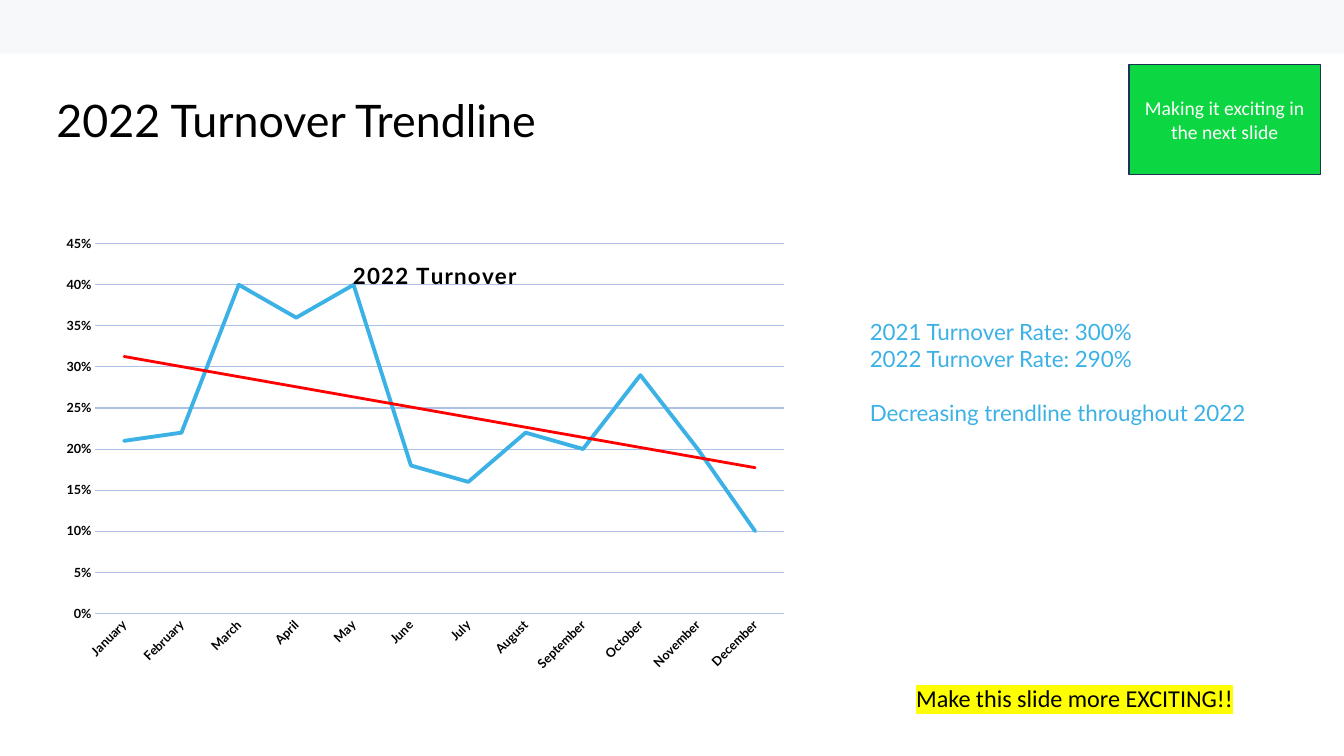
from dataclasses import dataclass

from lxml import etree
from pptx import Presentation
from pptx import oxml
from pptx.chart import data as cd
from pptx.dml import color as dc
from pptx.enum import chart as ec, shapes, text
from pptx.oxml import ns
from pptx.util import Pt

COLORS = {
    "band": "F7F8F9", "black": "000000", "white": "FFFFFF", "blue": "3CB1E5",
    "grid": "ABC0E4", "axis": "F2F2F2", "trend": "FF0000", "green": "0CD641",
    "navy": "1E3256", "yellow": "FFFF00",
}
MONTHS = ["January", "February", "March", "April", "May", "June", "July",
          "August", "September", "October", "November", "December"]
TURNOVER = [0.21, 0.22, 0.40, 0.36, 0.40, 0.18, 0.16, 0.22, 0.20, 0.29, 0.20, 0.10]


@dataclass
class Style:
    size: float
    color: str
    face: str = "Lato"
    bold: bool = False


@dataclass
class Note:
    box: tuple[float, float, float, float]
    lines: list[str]
    style: Style
    insets: tuple[float, float] = (7.2, 3.6)
    spacing: float = 1.0
    gap_before: int = -1  # index of the line that follows a gap
    highlight: str = ""


@dataclass
class Panel:
    box: tuple[float, float, float, float]
    fill: str
    line: str = ""
    label: str = ""


NOTES = [
    Note((40.3, 70.6, 422, 41), ["2022 Turnover Trendline"],
         Style(32, "black"), insets=(0, 0), spacing=0.9),
    Note((614.2, 223.9, 296, 104.4),
         ["2021 Turnover Rate: 300%", "2022 Turnover Rate: 290%",
          "Decreasing trendline throughout 2022"],
         Style(16, "blue"), gap_before=2),
    Note((647.3, 490.3, 296, 23), ["Make this slide more EXCITING!!"],
         Style(17.3, "black", "Calibri"), spacing=0.7, highlight="yellow"),
]
BAND = Panel((0, 0, 960, 38.2), "band")
CALLOUT = Panel((806.4, 46.1, 136.8, 78.5), "green", "navy",
                "Making it exciting in the next slide")


def rgb(name: str) -> dc.RGBColor:
    return dc.RGBColor.from_string(COLORS[name])


def set_font(font, style: Style) -> None:
    font.size = Pt(style.size)
    font.name = style.face
    font.bold = style.bold
    font.color.rgb = rgb(style.color)


def xml(body: str) -> etree._Element:
    tag, rest = body[1:].split(">", 1)
    end = "/" if tag.endswith("/") else ""
    return oxml.parse_xml(f"<{tag.rstrip('/')} {ns.nsdecls('a', 'c')}{end}>{rest}")


def layout(x: float, y: float, w: float = 0, h: float = 0) -> etree._Element:
    target = '<c:layoutTarget val="inner"/>' if w else ""
    size = f'<c:w val="{w}"/><c:h val="{h}"/>' if w else ""
    return xml(f'<c:layout><c:manualLayout>{target}<c:xMode val="edge"/>'
               f'<c:yMode val="edge"/><c:x val="{x}"/><c:y val="{y}"/>{size}'
               '</c:manualLayout></c:layout>')


def add_panel(slide, panel: Panel) -> None:
    sp = slide.shapes.add_shape(shapes.MSO_SHAPE.RECTANGLE, *map(Pt, panel.box))
    sp.shadow.inherit = False
    sp.fill.solid()
    sp.fill.fore_color.rgb = rgb(panel.fill)
    if panel.line:
        sp.line.color.rgb = rgb(panel.line)
        sp.line.width = Pt(1)
    else:
        sp.line.fill.background()
    if panel.label:
        tf = sp.text_frame
        tf.word_wrap = True
        tf.vertical_anchor = text.MSO_ANCHOR.MIDDLE
        p = tf.paragraphs[0]
        p.text = panel.label
        p.alignment = text.PP_ALIGN.CENTER
        set_font(p.font, Style(14, "white", "Calibri"))


def add_note(slide, note: Note) -> None:
    tf = slide.shapes.add_textbox(*map(Pt, note.box)).text_frame
    tf.word_wrap = True
    tf.margin_left = tf.margin_right = Pt(note.insets[0])
    tf.margin_top = tf.margin_bottom = Pt(note.insets[1])
    for i, line in enumerate(note.lines):
        p = tf.paragraphs[0] if i == 0 else tf.add_paragraph()
        r = p.add_run()
        r.text = line
        p.line_spacing = note.spacing
        if i == note.gap_before:
            p.space_before = Pt(19.2)
        set_font(p.font, note.style)
        if note.highlight:
            r._r.get_or_add_rPr().append(xml(
                f'<a:highlight><a:srgbClr val="{COLORS[note.highlight]}"/></a:highlight>'))


def style_axes(chart) -> None:
    months, rates = chart.category_axis, chart.value_axis
    for axis in (months, rates):
        axis.major_tick_mark = axis.minor_tick_mark = ec.XL_TICK_MARK.NONE
        set_font(axis.tick_labels.font, Style(9, "black", bold=True))
    months._element.find(ns.qn("c:txPr")).find(ns.qn("a:bodyPr")).set("rot", "-2700000")
    months.format.line.color.rgb = rgb("axis")
    months.format.line.width = Pt(0.75)
    axis_color = next(months._element.iter(ns.qn("a:srgbClr")))
    axis_color.append(xml('<a:alpha val="10000"/>'))

    rates.minimum_scale, rates.maximum_scale, rates.major_unit = 0, 0.45, 0.05
    rates.tick_labels.number_format = "0%"
    rates.tick_labels.number_format_is_linked = False
    rates.format.line.fill.background()
    rates.major_gridlines.format.line.color.rgb = rgb("grid")
    rates.major_gridlines.format.line.width = Pt(0.75)


def add_turnover_chart(slide) -> None:
    data = cd.CategoryChartData(number_format="0%")
    data.categories = MONTHS
    data.add_series("Series 1", TURNOVER)
    chart = slide.shapes.add_chart(ec.XL_CHART_TYPE.LINE, Pt(40.3), Pt(168.5),
                                   Pt(535.7), Pt(349.2), data).chart
    set_font(chart.font, Style(10, "black", "Calibri"))
    chart.has_legend = False
    style_axes(chart)

    # Title laid over the plot
    p = chart.chart_title.text_frame.paragraphs[0]
    p.text = "2022 Turnover"
    set_font(p.font, Style(16, "black", bold=True))
    p.font._element.set("spc", "100")
    title = chart.chart_title._element
    for old in title.findall(ns.qn("c:layout")):
        title.remove(old)
    title.find(ns.qn("c:tx")).addnext(layout(0.39, 0.04))
    chart.chart_title.include_in_layout = True
    title.find(ns.qn("c:overlay")).set("val", "1")

    # Plot area
    plot_area = chart._chartSpace.chart.plotArea
    for old in plot_area.findall(ns.qn("c:layout")):
        plot_area.remove(old)
    plot_area.insert(0, layout(0.052, 0.015, 0.918, 0.757))

    # Series and its linear trend
    chart.plots[0].vary_by_categories = False
    series = chart.plots[0].series[0]
    series.smooth = False
    series.marker.style = ec.XL_MARKER_STYLE.NONE
    series.format.line.color.rgb = rgb("blue")
    series.format.line.width = Pt(2.75)
    series._element.find(ns.qn("c:spPr")).find(ns.qn("a:ln")).set("cap", "rnd")
    series._element.find(ns.qn("c:cat")).addprevious(xml(
        f'<c:trendline><c:spPr><a:ln w="{Pt(2)}" cap="rnd"><a:solidFill>'
        f'<a:srgbClr val="{COLORS["trend"]}"/></a:solidFill></a:ln></c:spPr>'
        '<c:trendlineType val="linear"/><c:dispRSqr val="0"/><c:dispEq val="0"/>'
        '</c:trendline>'))


def main() -> None:
    prs = Presentation()
    prs.slide_width, prs.slide_height = Pt(960), Pt(540)
    slide = prs.slides.add_slide(prs.slide_layouts[6])
    add_panel(slide, BAND)
    add_turnover_chart(slide)
    for note in NOTES:
        add_note(slide, note)
    add_panel(slide, CALLOUT)
    prs.save("out.pptx")


if __name__ == "__main__":
    main()
